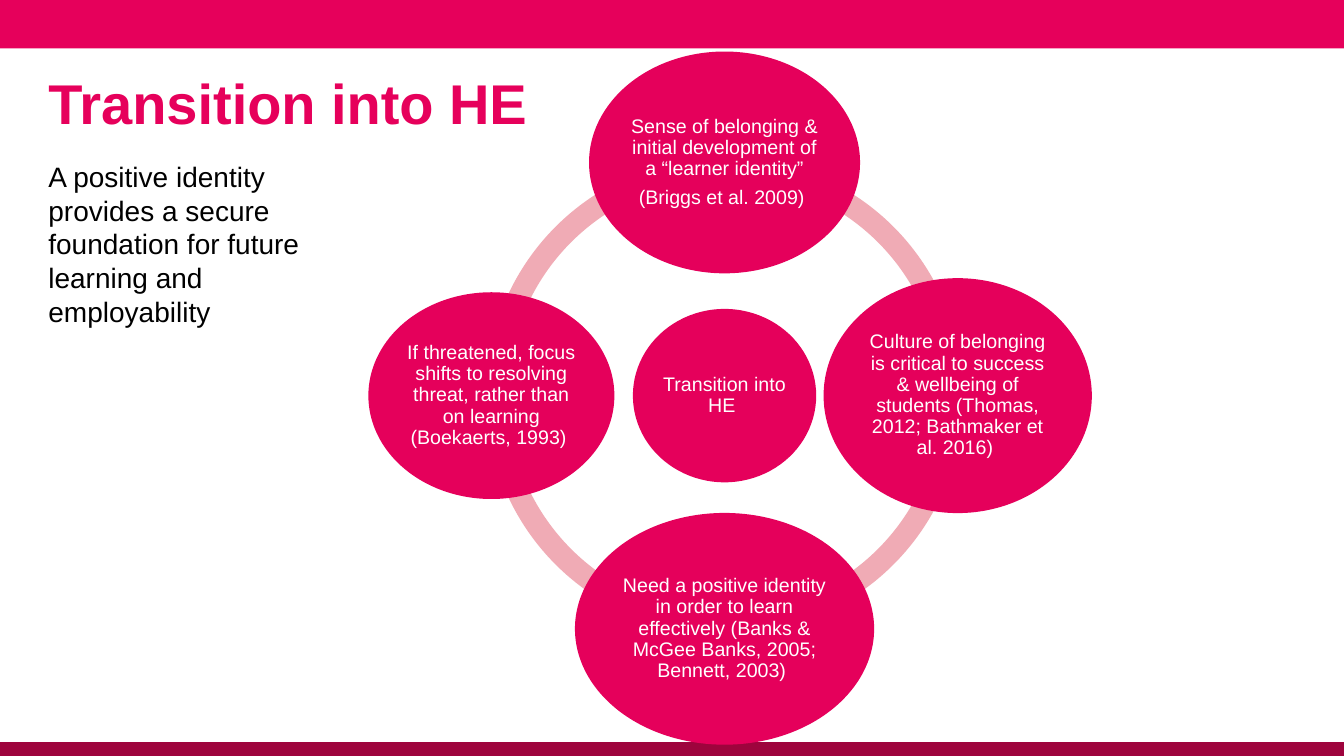
from dataclasses import dataclass
from math import cos, radians, sin

from pptx import Presentation
from pptx.dml.color import RGBColor
from pptx.enum.shapes import MSO_SHAPE
from pptx.enum.text import MSO_ANCHOR, MSO_AUTO_SIZE, PP_ALIGN
from pptx.util import Cm, Pt

RECTANGLE, OVAL, ARC = MSO_SHAPE.RECTANGLE, MSO_SHAPE.OVAL, MSO_SHAPE.BLOCK_ARC
MIDDLE, BOTTOM = MSO_ANCHOR.MIDDLE, MSO_ANCHOR.BOTTOM
LEFT, CENTER = PP_ALIGN.LEFT, PP_ALIGN.CENTER
NO_FIT = MSO_AUTO_SIZE.NONE
GROW = MSO_AUTO_SIZE.SHAPE_TO_FIT_TEXT
TITLE_ONLY = 5
QUARTER_TURN = 54


@dataclass(frozen=True)
class Theme:
    font: str = "Arial"
    pink: RGBColor = RGBColor(0xE6, 0x00, 0x5B)
    node: RGBColor = RGBColor(0xE5, 0x00, 0x5B)
    ring: RGBColor = RGBColor(0xF0, 0xAB, 0xB5)
    crimson: RGBColor = RGBColor(0x9E, 0x04, 0x3D)
    white: RGBColor = RGBColor(0xFF, 0xFF, 0xFF)
    black: RGBColor = RGBColor(0x00, 0x00, 0x00)
    title_size: Pt = Pt(40)
    body_size: Pt = Pt(20)
    node_size: Pt = Pt(14)


THEME = Theme()

HUB = ("Transition into HE ",)
NODES = [
    (6.83, 5.59, ("Sense of belonging & initial development of a “learner identity”",
                  "(Briggs et al. 2009) ")),
    (6.76, 5.92, ("Culture of belonging is critical to success & wellbeing of "
                  "students (Thomas, 2012; Bathmaker et al. 2016) ",)),
    (7.54, 5.84, ("Need a positive identity in order to learn effectively "
                  "(Banks & McGee Banks, 2005; Bennett, 2003) ",)),
    (6.2, 5.21, ("If threatened, focus shifts to resolving threat, rather than "
                 "on learning (Boekaerts, 1993) ",)),
]


def add_solid(slide, preset, left, top, width, height, color):
    shape = slide.shapes.add_shape(preset, Cm(left), Cm(top), Cm(width), Cm(height))
    shape.shadow.inherit = False
    shape.fill.solid()
    shape.fill.fore_color.rgb = color
    shape.line.fill.background()
    return shape


def set_insets(frame, left, top, right, bottom):
    frame.margin_left, frame.margin_top = Cm(left), Cm(top)
    frame.margin_right, frame.margin_bottom = Cm(right), Cm(bottom)


def write(frame, texts, size, color, align, bold=False):
    frame.word_wrap = True
    for index, text in enumerate(texts):
        para = frame.add_paragraph() if index else frame.paragraphs[0]
        para.text = text
        para.alignment = align
        para.font.name = THEME.font
        para.font.size = size
        para.font.bold = bold
        para.font.color.rgb = color


def add_bars(slide, width, height):
    footer = 0.35
    add_solid(slide, RECTANGLE, 0, 0, width, 1.22, THEME.pink)
    add_solid(slide, RECTANGLE, 0, height - footer, width, footer, THEME.crimson)


def add_title(slide, left, top, width, height):
    title = slide.shapes.title
    title.left, title.top = Cm(left), Cm(top)
    title.width, title.height = Cm(width), Cm(height)
    frame = title.text_frame
    frame.auto_size = NO_FIT
    frame.vertical_anchor = MIDDLE
    set_insets(frame, 0, 0.13, 0.25, 0.13)
    write(frame, ["Transition into HE"], THEME.title_size, THEME.pink, LEFT, bold=True)


def add_message(slide, left, top, width, height):
    box = slide.shapes.add_textbox(Cm(left), Cm(top), Cm(width), Cm(height))
    frame = box.text_frame
    frame.auto_size = GROW
    frame.vertical_anchor = BOTTOM
    set_insets(frame, 0, 0, 0, 0)
    message = "A positive identity provides a secure foundation for future learning and employability"
    write(frame, [message], THEME.body_size, THEME.black, LEFT)


def add_node(slide, center_x, center_y, width, height, texts):
    node = add_solid(slide, OVAL, center_x - width / 2, center_y - height / 2,
                     width, height, THEME.node)
    frame = node.text_frame
    frame.vertical_anchor = MIDDLE
    set_insets(frame, 0.05, 0.05, 0.05, 0.05)
    write(frame, texts, THEME.node_size, THEME.white, CENTER)
    for para in frame.paragraphs:
        para.line_spacing = 0.9
        para.space_after = Pt(5)


def add_cycle(slide, left, top, side):
    center_x, center_y = left + side / 2, top + side / 2
    orbit = side * 0.488
    for quarter in range(len(NODES)):
        arc = add_solid(slide, ARC, left, top, side, side, THEME.ring)
        start = quarter * QUARTER_TURN
        arc.adjustments[0] = start
        arc.adjustments[1] = (start + QUARTER_TURN) % (4 * QUARTER_TURN)
        arc.adjustments[2] = 0.046
    add_node(slide, center_x, center_y, 4.62, 4.37, HUB)
    for index, (width, height, texts) in enumerate(NODES):
        angle = radians(90 * index - 90)
        add_node(slide, center_x + orbit * cos(angle), center_y + orbit * sin(angle),
                 width, height, texts)


def main():
    deck = Presentation()
    width, height = 33.87, 19.05
    deck.slide_width, deck.slide_height = Cm(width), Cm(height)
    slide = deck.slides.add_slide(deck.slide_layouts[TITLE_ONLY])
    add_bars(slide, width, height)
    add_title(slide, 1.22, 1.19, 31.39, 2.79)
    add_message(slide, 1.22, 3.99, 7.62, 4.27)
    add_cycle(slide, 12.24, 3.95, 12.04)
    deck.save("out.pptx")


if __name__ == "__main__":
    main()
